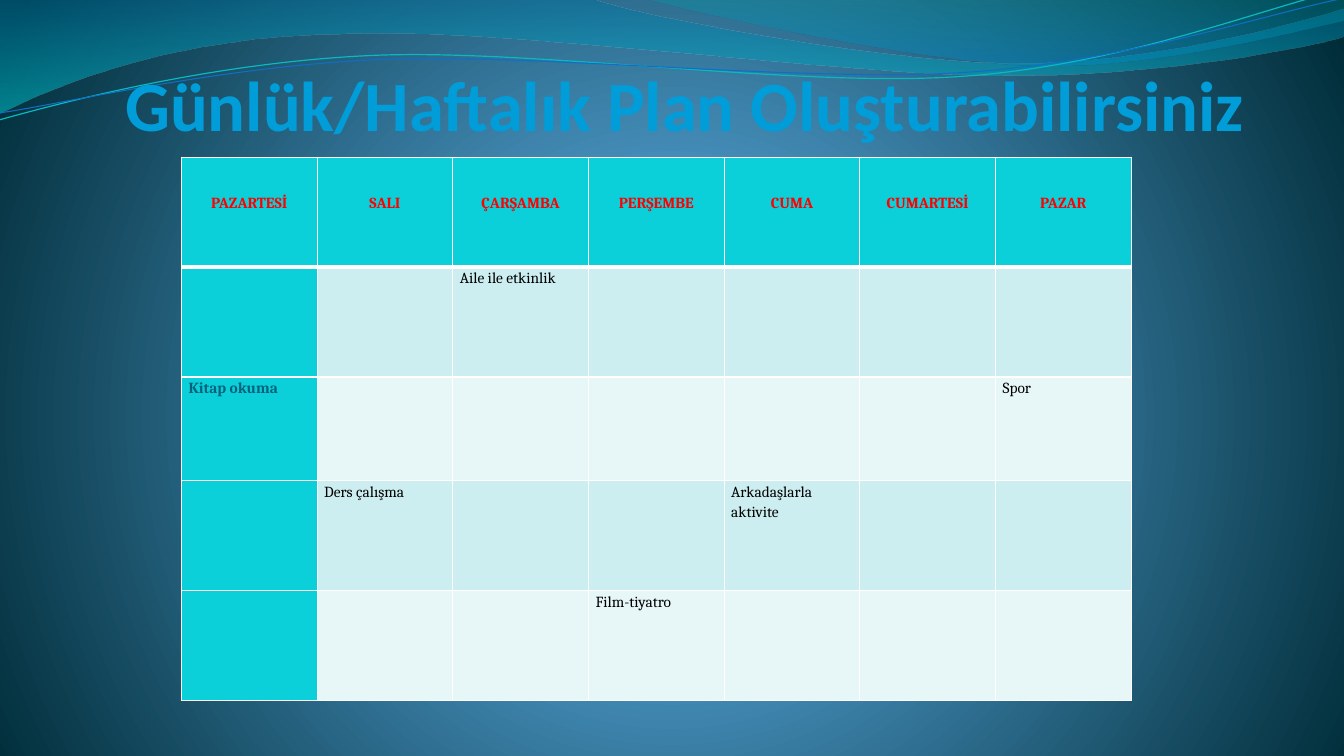
import pptx
import pptx.util
import pptx.dml.color
import pptx.enum.text
import pptx.oxml
import pptx.oxml.ns

Inches, Pt = pptx.util.Inches, pptx.util.Pt
ALIGN, ANCHOR = pptx.enum.text.PP_ALIGN, pptx.enum.text.MSO_ANCHOR
qn = pptx.oxml.ns.qn
SPACE = pptx.oxml.ns.nsdecls("a")

# Content
TITLE = "Günlük/Haftalık Plan Oluşturabilirsiniz"
DAYS = ["PAZARTESİ", "SALI", "ÇARŞAMBA", "PERŞEMBE", "CUMA", "CUMARTESİ", "PAZAR"]
PLANS = {
    (1, 2): "Aile ile etkinlik",
    (2, 0): "Kitap okuma",
    (2, 6): "Spor",
    (3, 1): "Ders çalışma",
    (3, 4): "Arkadaşlarla aktivite",
    (4, 3): "Film-tiyatro",
}
ROWS = [1.09, 1.09, 1.03, 1.09, 1.09]

# Theme: colours, gradients as (position, colour, opacity), type
THEME = {
    "back": [(0, "4AA0D6", 100), (25, "4C98C7", 100), (100, "002C38", 100)],
    "broad": [(0, "0074A1", 45), (100, "00C6CF", 55)],
    "small": [(0, "00A1A9", 30), (80, "008BBF", 45)],
    "teal": "0BD0D9",
    "bands": ("E7F7F8", "CCEEF1"),
    "rule": "FFFFFF",
    "title": {"name": "Calibri", "size": Pt(50.4), "bold": True, "color": "009DD9"},
    "day": {"name": "Cambria", "size": Pt(11), "bold": True, "color": "FF0000"},
    "first": {"name": "Cambria", "size": Pt(11), "bold": True, "color": "04617B"},
    "plan": {"name": "Cambria", "size": Pt(11), "bold": False, "color": "000000"},
}

# Waves: start point, then lines (2 numbers) or cubic curves (6 numbers)
FILLED = [
    ("broad", (0, 0), [
        (5.87, -0.01), (6.34, 0.17, 8.85, 0.63, 10.11, 0.63),
        (11.38, 0.63, 12.78, 0.26, 13.33, 0.09), (13.35, 0.36),
        (13.11, 0.44, 11.6, 0.76, 9.94, 0.75), (8.29, 0.75, 5.09, 0.28, 3.43, 0.34),
        (1.72, 0.36, 0.61, 0.83, -0.01, 1.13)]),
    ("small", (6.39, -0.01), [
        (6.79, 0.11, 9.09, 0.62, 10.25, 0.65),
        (11.41, 0.69, 12.82, 0.32, 13.33, 0.21), (13.33, 0)]),
]
STROKES = [
    ("0AB8BF", 0.85, (-0.01, 1.19), [
        (0.64, 1.01, 2.11, 0.62, 3.69, 0.55), (5.27, 0.48, 7.9, 0.87, 9.5, 0.76),
        (11.1, 0.66, 12.52, 0.08, 13.31, -0.1)]),
    ("0F6FC6", 0.75, (0, 1.12), [
        (0.63, 1.03, 2.18, 0.66, 3.78, 0.59), (5.37, 0.53, 7.96, 0.82, 9.55, 0.72),
        (11.15, 0.62, 12.55, 0.14, 13.34, -0.02)]),
]


def color(code):
    return pptx.dml.color.RGBColor.from_string(code)


def put(thing, form):
    for key, value in form.items():
        if key == "color":
            thing.color.rgb = color(value)
        else:
            setattr(thing, key, value)


def blend(fill, props, stops, way):
    """Turn a solid fill into a gradient with opacity."""
    fill.solid()
    marks = ""
    for pos, code, alpha in stops:
        clear = f'<a:alpha val="{alpha * 1000}"/>' if alpha < 100 else ""
        marks += f'<a:gs pos="{pos * 1000}"><a:srgbClr val="{code}">{clear}</a:srgbClr></a:gs>'
    grad = pptx.oxml.parse_xml(
        f'<a:gradFill {SPACE} rotWithShape="1"><a:gsLst>{marks}</a:gsLst>{way}</a:gradFill>')
    props.replace(props.find(qn("a:solidFill")), grad)


def wave(slide, start, parts, close):
    """Draw the knots as lines, then join each curve's three into one cubic."""
    knots = [(Inches(part[i]), Inches(part[i + 1]))
             for part in parts for i in range(0, len(part), 2)]
    build = slide.shapes.build_freeform(Inches(start[0]), Inches(start[1]))
    build.add_line_segments(knots, close=close)
    shape = build.convert_to_shape()
    shape.shadow.inherit = False
    lines = iter(shape.element.findall(".//" + qn("a:lnTo")))
    for part in parts:
        group = [next(lines) for _ in range(len(part) // 2)]
        if len(group) == 3:
            curve = pptx.oxml.parse_xml(f"<a:cubicBezTo {SPACE}/>")
            group[0].addprevious(curve)
            for line in group:
                curve.append(line[0])
                line.getparent().remove(line)
    return shape


def border(cell, sides):
    for side, width in sides.items():
        cell._tc.get_or_add_tcPr().append(pptx.oxml.parse_xml(
            f'<a:ln{side} {SPACE} w="{Pt(width)}">'
            f'<a:solidFill><a:srgbClr val="{THEME["rule"]}"/></a:solidFill></a:ln{side}>'))


def write(frame, text, font, align):
    para = frame.paragraphs[0]
    para.alignment = align
    run = para.add_run()
    run.text = text
    put(run.font, font)
    return para


def main():
    deck = pptx.Presentation()
    put(deck, {"slide_width": Inches(13.33), "slide_height": Inches(7.5)})
    slide = deck.slides.add_slide(deck.slide_layouts[5])

    # Background
    fill = slide.background.fill
    fill.solid()
    props = slide.element.find(".//" + qn("p:bgPr"))
    blend(fill, props, THEME["back"],
          '<a:path path="circle"><a:fillToRect l="10000" t="110000" r="10000" b="100000"/></a:path>')

    # Waves
    for name, start, parts in FILLED:
        shape = wave(slide, start, parts, True)
        blend(shape.fill, shape.element.spPr, THEME[name], '<a:lin ang="5400000" scaled="0"/>')
        shape.line.fill.background()
    for code, width, start, parts in STROKES:
        shape = wave(slide, start, parts, False)
        shape.fill.background()
        put(shape.line, {"color": code, "width": Pt(width)})

    # Title, in front of the waves
    title = slide.shapes.title
    title.element.getparent().append(title.element)
    put(title, {"left": Inches(0.97), "top": Inches(0.51),
                "width": Inches(11.4), "height": Inches(0.94)})
    put(title.text_frame, {
        "margin_left": 0, "margin_top": 0, "margin_right": Inches(0.02), "margin_bottom": 0,
        "vertical_anchor": ANCHOR.BOTTOM, "word_wrap": True,
        "auto_size": pptx.enum.text.MSO_AUTO_SIZE.NONE})
    write(title.text_frame, TITLE, THEME["title"], ALIGN.RIGHT)

    # Week table
    table = slide.shapes.add_table(
        len(ROWS), len(DAYS), Inches(1.8), Inches(1.56), Inches(9.42), Inches(sum(ROWS))).table
    for row, height in zip(table.rows, ROWS):
        row.height = Inches(height)
    texts = {(0, col): day for col, day in enumerate(DAYS)} | PLANS
    for row in range(len(ROWS)):
        for col in range(len(DAYS)):
            cell = table.cell(row, col)
            head = row == 0
            border(cell, {"L": 1, "R": 1, "T": 3 if row == 1 else 1, "B": 3 if head else 1})
            cell.fill.solid()
            cell.fill.fore_color.rgb = color(
                THEME["teal"] if head or col == 0 else THEME["bands"][row % 2])
            put(cell, {"margin_left": Inches(0.07), "margin_right": Inches(0.07),
                       "margin_top": Inches(0.34 if head else 0), "margin_bottom": 0,
                       "vertical_anchor": ANCHOR.TOP})
            if (row, col) in texts:
                font = THEME["day" if head else "plan" if col else "first"]
                para = write(cell.text_frame, texts[row, col], font,
                             ALIGN.CENTER if head else ALIGN.LEFT)
                para.line_spacing = 1.15

    deck.save("out.pptx")


if __name__ == "__main__":
    main()
